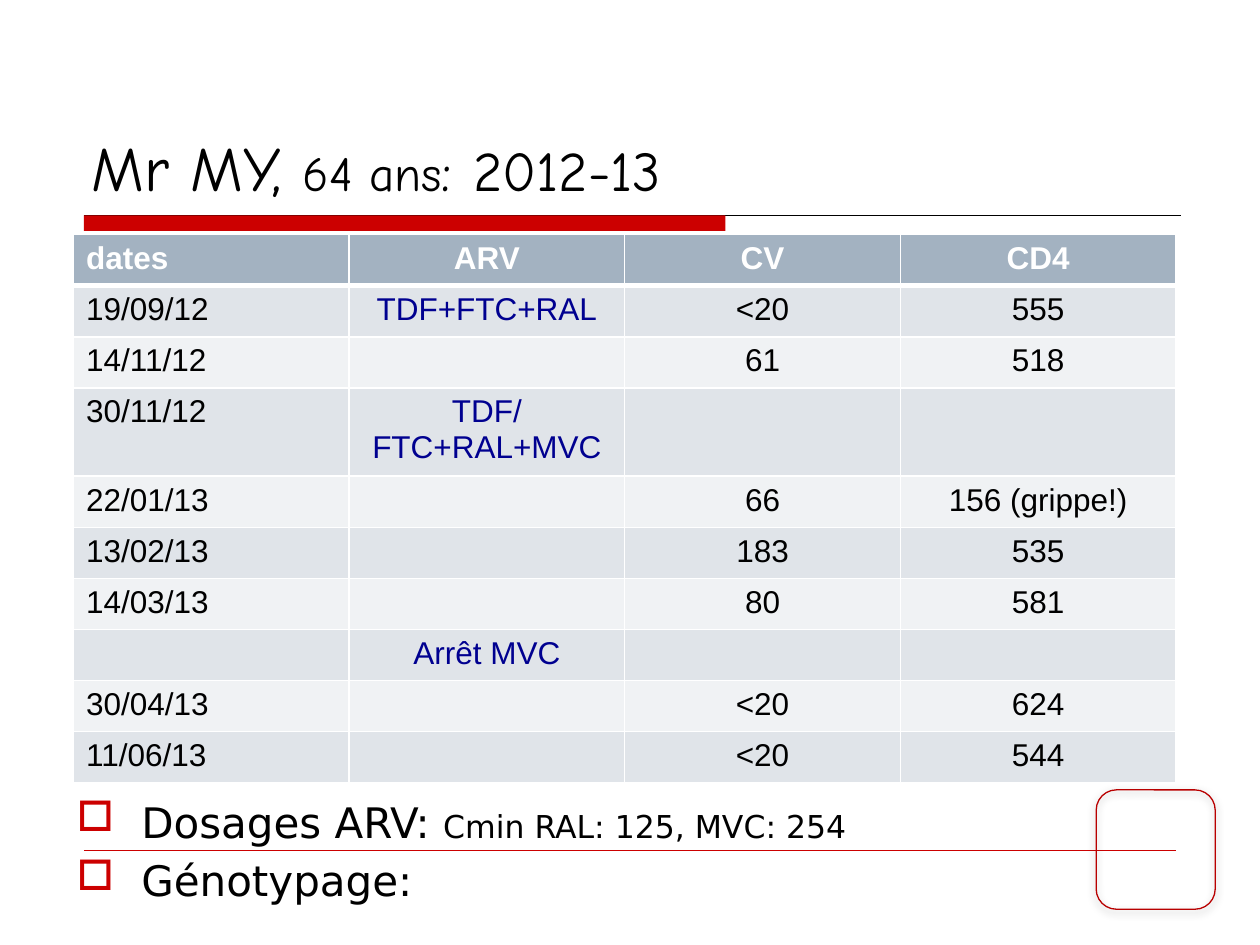
from lxml.etree import SubElement
from pptx import Presentation
from pptx.dml.color import RGBColor
from pptx.enum.shapes import MSO_CONNECTOR, MSO_SHAPE
from pptx.enum.text import MSO_ANCHOR, PP_ALIGN
from pptx.oxml.ns import qn
from pptx.util import Pt

COLORS = {
    "red": "CC0000", "dark red": "B90000", "black": "000000", "white": "FFFFFF",
    "blue": "000090", "header": "A3B2C1", "odd row": "E0E4E9", "even row": "F0F2F4",
}


def add_run(paragraph, text, size, font, color="black", bold=False):
    run = paragraph.add_run()
    run.text = text
    run.font.size = Pt(size)
    run.font.name = font
    run.font.bold = bold
    run.font.color.rgb = RGBColor.from_string(COLORS[color])


def add_rule(slide, left, right, top, color, width):
    connector = slide.shapes.add_connector(
        MSO_CONNECTOR.STRAIGHT, Pt(left), Pt(top), Pt(right), Pt(top))
    connector.line.color.rgb = RGBColor.from_string(COLORS[color])
    connector.line.width = Pt(width)
    SubElement(connector._element.spPr, qn("a:effectLst"))


presentation = Presentation()
presentation.slide_width = Pt(720)
presentation.slide_height = Pt(540)
slide = presentation.slides.add_slide(presentation.slide_layouts[5])

# Title
title = slide.shapes.title
title.left, title.top, title.width, title.height = Pt(45), Pt(24), Pt(630), Pt(96)
title.text_frame.vertical_anchor = MSO_ANCHOR.BOTTOM
paragraph = title.text_frame.paragraphs[0]
paragraph.alignment = PP_ALIGN.LEFT
for text, size in [("Mr MY, ", 36), ("64 ans", 28), (":", 32), (" ", 36), ("2012-13", 32)]:
    add_run(paragraph, text, size, "Comic Neue")

# Rules under the title and at the foot
add_rule(slide, 48, 674.6, 123.1, "black", 0.75)
title_bar = slide.shapes.add_shape(
    MSO_SHAPE.RECTANGLE, Pt(48), Pt(123.1), Pt(366.5), Pt(8.9))
title_bar.shadow.inherit = False
title_bar.fill.solid()
title_bar.fill.fore_color.rgb = RGBColor.from_string(COLORS["red"])
title_bar.line.fill.background()
add_rule(slide, 48, 672, 486, "red", 0.25)

# Bulleted remarks
remarks = slide.shapes.add_textbox(Pt(36.7), Pt(451.4), Pt(630), Pt(73.4))
remarks.text_frame.word_wrap = True
remark_runs = [
    [("Dosages ARV: ", 24), ("Cmin RAL: 125, MVC: 254", 18)],
    [("Génotypage:", 24)],
]
for index, runs in enumerate(remark_runs):
    frame = remarks.text_frame
    paragraph = frame.add_paragraph() if index else frame.paragraphs[0]
    paragraph.space_before = Pt(4.8)
    properties = paragraph._p.get_or_add_pPr()
    properties.set("marL", str(Pt(37)))
    properties.set("indent", str(-Pt(37)))
    bullet_color = SubElement(properties, qn("a:buClr"))
    SubElement(bullet_color, qn("a:srgbClr"), val=COLORS["red"])
    SubElement(properties, qn("a:buChar"), char="□")
    for text, size in runs:
        add_run(paragraph, text, size, "DejaVu Sans")

# Follow-up table
rows = [
    ("dates", "ARV", "CV", "CD4"),
    ("19/09/12", "TDF+FTC+RAL", "<20", "555"),
    ("14/11/12", "", "61", "518"),
    ("30/11/12", "TDF/FTC+RAL+MVC", "", ""),
    ("22/01/13", "", "66", "156 (grippe!)"),
    ("13/02/13", "", "183", "535"),
    ("14/03/13", "", "80", "581"),
    ("", "Arrêt MVC", "", ""),
    ("30/04/13", "", "<20", "624"),
    ("11/06/13", "", "<20", "544"),
]
table = slide.shapes.add_table(
    len(rows), 4, Pt(42), Pt(134.1), Pt(630), Pt(313.2)).table
for column in table.columns:
    column.width = Pt(157.5)
for row_index, row in enumerate(rows):
    is_header = row_index == 0
    table.rows[row_index].height = Pt(50.4 if row_index == 3 else 29.2)
    fill = "header" if is_header else ("odd row" if row_index % 2 else "even row")
    for column_index, text in enumerate(row):
        cell = table.cell(row_index, column_index)
        # Borders come before the fill in the cell properties
        properties = cell._tc.get_or_add_tcPr()
        for side in ("L", "R", "T", "B"):
            thick = (is_header and side == "B") or (row_index == 1 and side == "T")
            border = SubElement(properties, qn("a:ln" + side), w=str(Pt(3 if thick else 1)))
            border_fill = SubElement(border, qn("a:solidFill"))
            SubElement(border_fill, qn("a:srgbClr"), val=COLORS["white"])
        cell.fill.solid()
        cell.fill.fore_color.rgb = RGBColor.from_string(COLORS[fill])
        paragraph = cell.text_frame.paragraphs[0]
        paragraph.alignment = PP_ALIGN.CENTER if column_index else PP_ALIGN.LEFT
        if text:
            color = "white" if is_header else ("blue" if column_index == 1 else "black")
            add_run(paragraph, text, 18, "Arial", color, is_header)

# Rounded frame in the corner, with a soft shadow
corner_frame = slide.shapes.add_shape(
    MSO_SHAPE.ROUNDED_RECTANGLE, Pt(626.4), Pt(451.4), Pt(68), Pt(68.2))
corner_frame.adjustments[0] = 0.17
corner_frame.fill.background()
corner_frame.line.color.rgb = RGBColor.from_string(COLORS["dark red"])
corner_frame.line.width = Pt(0.75)
effects = SubElement(corner_frame._element.spPr, qn("a:effectLst"))
shadow = SubElement(effects, qn("a:outerShdw"), blurRad=str(Pt(5)), dist=str(Pt(1.8)),
                    dir="5400000", rotWithShape="0")
shadow_color = SubElement(shadow, qn("a:srgbClr"), val=COLORS["black"])
SubElement(shadow_color, qn("a:alpha"), val="35000")

presentation.save("out.pptx")
